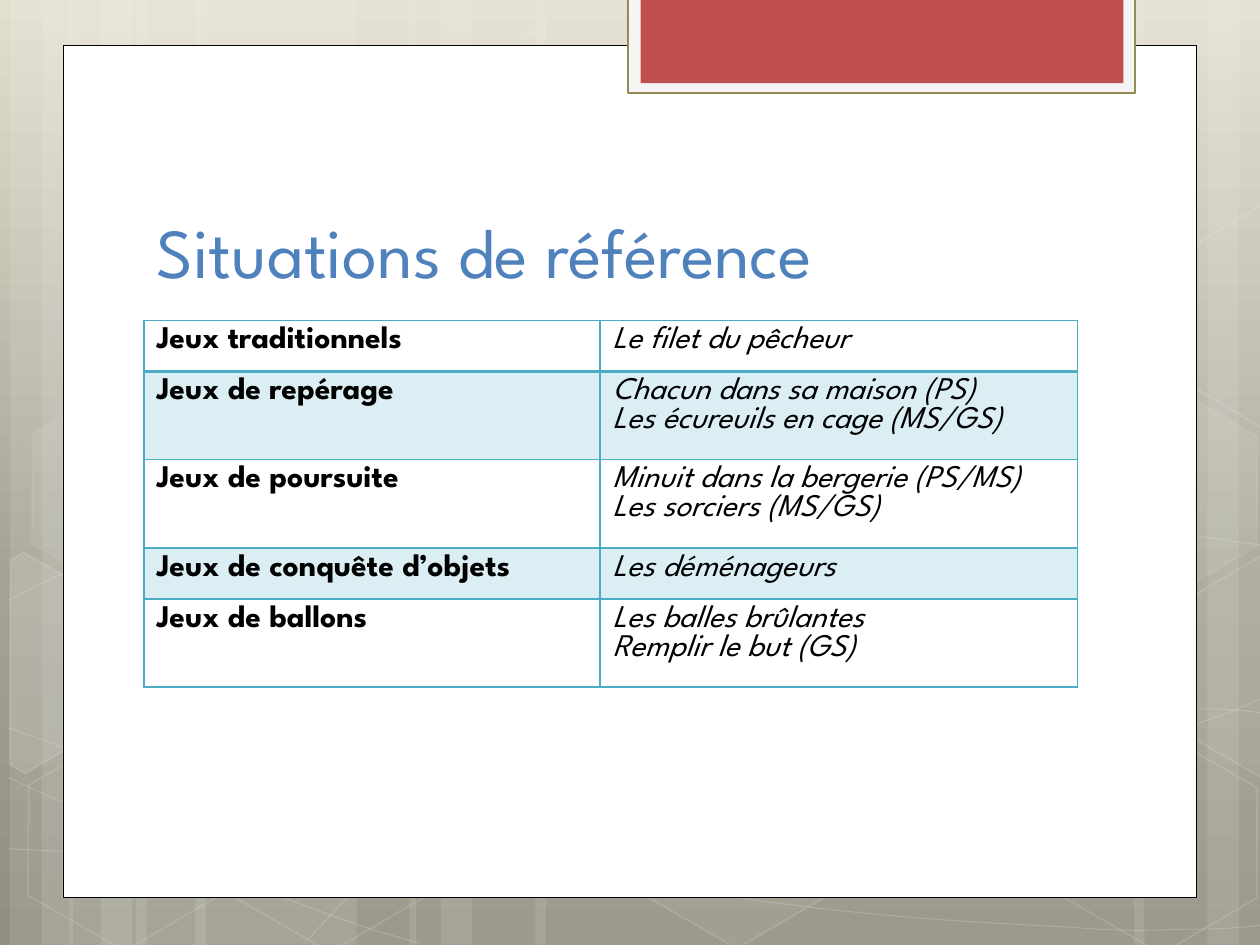
from copy import deepcopy
from dataclasses import dataclass
from math import cos, radians, sin
from typing import NamedTuple

from lxml import etree
from pptx import Presentation
from pptx.dml.color import RGBColor
from pptx.enum import shapes as kinds, text as txt
from pptx.oxml.ns import qn
from pptx.util import Pt


@dataclass(frozen=True)
class Theme:
    font: str = "League Spartan"
    head: float = 40
    body: float = 18
    white: str = "FFFFFF"
    black: str = "000000"
    blue: str = "4F81BD"
    aqua: str = "4BACC6"
    red: str = "C0504D"
    pale: str = "F5F5F5"
    olive: str = "948A54"
    sky: tuple = ((0, "E2DFCF"), (0.62, "A5A293"), (1, "928F80"))


class Box(NamedTuple):
    x: float
    y: float
    w: float
    h: float


class Look(NamedTuple):
    """Fill and line colours (empty for none), with opacity in percent."""
    fill: str = ""
    line: str = ""
    wide: float = 1
    clear: int = 100
    faint: int = 100


class Hex(NamedTuple):
    x: float
    y: float
    fill: int
    line: int


class Cut(NamedTuple):
    """A tilted hexagon cut off by the slide's edge."""
    fill: int
    mid: tuple
    dots: list


class Row(NamedTuple):
    kind: str
    games: tuple
    high: float


T = Theme()
SHAPE = kinds.MSO_SHAPE
WIDE, HIGH, TILT = 720, 540, 30

BANDS = [(77.8, 126), (5.8, 36), (23.8, 60), (111.6, 126), (39.6, 36), (57.6, 60),
         (528, 126), (690, 36), (648, 60), (306, 222), (234, 36), (252, 60)]

# Each curve is a start point, then three Bézier points per segment
CURVES = [
    [(5, 485), (44, 487), (83, 489), (137, 488), (191, 487), (258, 486), (330, 479),
     (402, 472), (504, 458), (570, 444), (636, 431), (703, 409), (725, 397)],
    [(5, 343), (26, 332), (47, 321), (87, 310), (128, 300), (186, 284), (250, 279),
     (314, 274), (392, 273), (471, 279), (550, 284), (682, 307), (725, 312)],
    [(4, 444), (91, 484), (178, 523), (240, 539)],
    [(5, 416), (27, 424), (50, 432), (92, 444), (134, 454), (197, 472), (257, 485),
     (317, 497), (392, 510), (452, 517), (512, 525), (576, 528), (614, 530),
     (652, 533), (662, 531), (680, 531), (699, 531), (712, 530), (725, 528)],
    [(174, 539), (187, 525), (200, 510), (217, 498), (235, 485), (259, 470), (279, 460),
     (300, 450), (312, 446), (338, 438), (364, 431), (413, 421), (438, 416),
     (464, 411), (467, 411), (490, 410), (512, 408), (547, 405), (572, 405),
     (597, 404), (638, 405), (638, 405), (654, 405), (670, 405), (686, 405),
     (699, 405), (711, 406), (718, 407), (724, 408), (722, 407), (724, 408)],
]

HEXES = [Hex(240.5, 25.9, 4, 8), Hex(357.8, 424.1, 6, 12), Hex(7.9, 425.5, 0, 12),
         Hex(10.1, 224.6, 7, 8), Hex(125.3, 426.2, 0, 12), Hex(542.2, 326.2, 10, 12),
         Hex(600.5, 427, 0, 12), Hex(600.5, 226.1, 7, 8)]

CUTS = [
    Cut(10, (25.9, 385.2),
        [(5.8, 320.4), (13.7, 315.4), (69.1, 347), (68.4, 410.4), (14.4, 442.1), (5.8, 437)]),
    Cut(4, (709.2, 374.4),
        [(666.7, 349.2), (720.7, 317.5), (726.5, 321.1), (726.5, 441.4), (721.4, 444.2), (666.7, 412.6)]),
    Cut(0, (709.2, 173.5),
        [(666.7, 149), (720.7, 117.4), (727.2, 121), (726.5, 241.2), (721.4, 244.1), (666.7, 212.4)]),
]

LOW, TALL = 29.2, 40.4
ROWS = [
    Row("Jeux traditionnels", ("Le filet du pêcheur",), LOW),
    Row("Jeux de repérage", ("Chacun dans sa maison (PS)", "Les écureuils en cage (MS/GS)"), TALL),
    Row("Jeux de poursuite", ("Minuit dans la bergerie (PS/MS)", "Les sorciers (MS/GS)"), TALL),
    Row("Jeux de conquête d’objets", ("Les déménageurs",), LOW),
    Row("Jeux de ballons", ("Les balles brûlantes", "Remplir le but (GS)"), TALL),
]


def tint(fill, hue: str, clear: int = 100) -> None:
    fill.solid()
    fill.fore_color.rgb = RGBColor.from_string(hue)
    if clear < 100:
        node = fill.fore_color._xFill.find(qn("a:srgbClr"))
        etree.SubElement(node, qn("a:alpha"), val=str(clear * 1000))


def paint(shape, look: Look) -> None:
    shape.shadow.inherit = False
    if look.fill and look.clear:
        tint(shape.fill, look.fill, look.clear)
    else:
        shape.fill.background()
    if look.line:
        tint(shape.line.fill, look.line, look.faint)
        shape.line.width = Pt(look.wide)
    else:
        shape.line.fill.background()


def block(slide, box: Box, look: Look, kind=SHAPE.RECTANGLE):
    shape = slide.shapes.add_shape(kind, *map(Pt, box))
    paint(shape, look)
    return shape


def trace(slide, dots: list, look: Look, close: bool):
    pen = slide.shapes.build_freeform(*dots[0], scale=Pt(1))
    pen.add_line_segments(dots[1:], close=close)
    shape = pen.convert_to_shape()
    paint(shape, look)
    return shape


def bend(shape) -> None:
    """Join every three line segments of a freeform into one Bézier segment."""
    legs = list(shape._element.iter(qn("a:lnTo")))
    for at in range(0, len(legs), 3):
        arc = etree.Element(qn("a:cubicBezTo"))
        legs[at].addprevious(arc)
        for leg in legs[at:at + 3]:
            arc.append(leg[0])
            leg.getparent().remove(leg)


def level(cut: Cut) -> list:
    """Turn the points back about the middle, to undo the tilt."""
    c, s = cos(radians(TILT)), sin(radians(TILT))
    mx, my = cut.mid
    return [(mx + (x - mx) * c + (y - my) * s, my - (x - mx) * s + (y - my) * c)
            for x, y in cut.dots]


def write(frame, lines: tuple, size: float, hue: str, bold: bool = False, slant: bool = False) -> None:
    for num, line in enumerate(lines):
        para = frame.paragraphs[0] if num == 0 else frame.add_paragraph()
        para.text = line
        # Row heights are measured from the run, so it carries the font too
        for font in (para.font, para.runs[0].font):
            font.name, font.size, font.bold, font.italic = T.font, Pt(size), bold, slant
            font.color.rgb = RGBColor.from_string(hue)


def edge(cell, top: float, base: float) -> None:
    """Rule all four sides; only top and base widths vary."""
    props = cell._tc.get_or_add_tcPr()
    for num, (side, wide) in enumerate(zip("LRTB", (1, 1, top, base))):
        line = etree.Element(qn(f"a:ln{side}"), w=str(Pt(wide)))
        fill = etree.SubElement(line, qn("a:solidFill"))
        etree.SubElement(fill, qn("a:srgbClr"), val=T.aqua)
        props.insert(num, line)


def backdrop(slide) -> None:
    fill = slide.background.fill
    fill.gradient()
    fill.gradient_angle = 270
    stops = slide._element.find(".//" + qn("a:gsLst"))
    stops.append(deepcopy(stops[-1]))
    for stop, (place, hue) in zip(fill.gradient_stops, T.sky):
        stop.position = place
        stop.color.rgb = RGBColor.from_string(hue)
    for x, w in BANDS:
        block(slide, Box(x, 0, w, HIGH), Look(T.white, clear=10))
    for curve in CURVES:
        bend(trace(slide, curve, Look(line=T.white, wide=0.5, faint=20), False))
    for item in HEXES:
        look = Look(T.white, T.white, 1, item.fill, item.line)
        shape = block(slide, Box(item.x, item.y, 126, 109.4), look, SHAPE.HEXAGON)
        shape.adjustments[0], shape.adjustments[1] = 0.285, 1.155
        shape.rotation = TILT
    for cut in CUTS:
        trace(slide, level(cut), Look(T.white, T.white, 1, cut.fill, 12), True).rotation = TILT


def title(slide, box: Box, words: str) -> None:
    frame = slide.shapes.add_textbox(*map(Pt, box)).text_frame
    frame.word_wrap = True
    frame.vertical_anchor = txt.MSO_ANCHOR.BOTTOM
    write(frame, (words,), T.head, T.blue)


def grid(slide, x: float, y: float, cols: tuple) -> None:
    high = sum(row.high for row in ROWS)
    table = slide.shapes.add_table(len(ROWS), len(cols), *map(Pt, (x, y, sum(cols), high))).table
    table.first_row = table.horz_banding = False
    for col, wide in zip(table.columns, cols):
        col.width = Pt(wide)
    for num, row in enumerate(ROWS):
        table.rows[num].height = Pt(row.high)
        left, right = table.rows[num].cells
        write(left.text_frame, (row.kind,), T.body, T.black, bold=True)
        write(right.text_frame, row.games, T.body, T.black, slant=True)
        for cell in (left, right):
            if num % 2:
                tint(cell.fill, T.aqua, 20)
            else:
                cell.fill.background()
            edge(cell, 2 if num == 1 else 1, 2 if num == 0 else 1)


def main() -> None:
    deck = Presentation()
    deck.slide_width, deck.slide_height = Pt(WIDE), Pt(HIGH)
    slide = deck.slides.add_slide(deck.slide_layouts[6])
    backdrop(slide)
    block(slide, Box(36, 26, 648, 487), Look(T.white, T.black, 0.5))
    block(slide, Box(359, -1.5, 289.7, 54.7), Look(T.pale, T.olive, 1.25))
    block(slide, Box(366, -1.5, 276, 49), Look(T.red))
    title(slide, Box(82.3, 80.6, 553, 90), "Situations de référence")
    grid(slide, 82.3, 183, (260.6, 272.9))
    deck.save("out.pptx")


if __name__ == "__main__":
    main()
